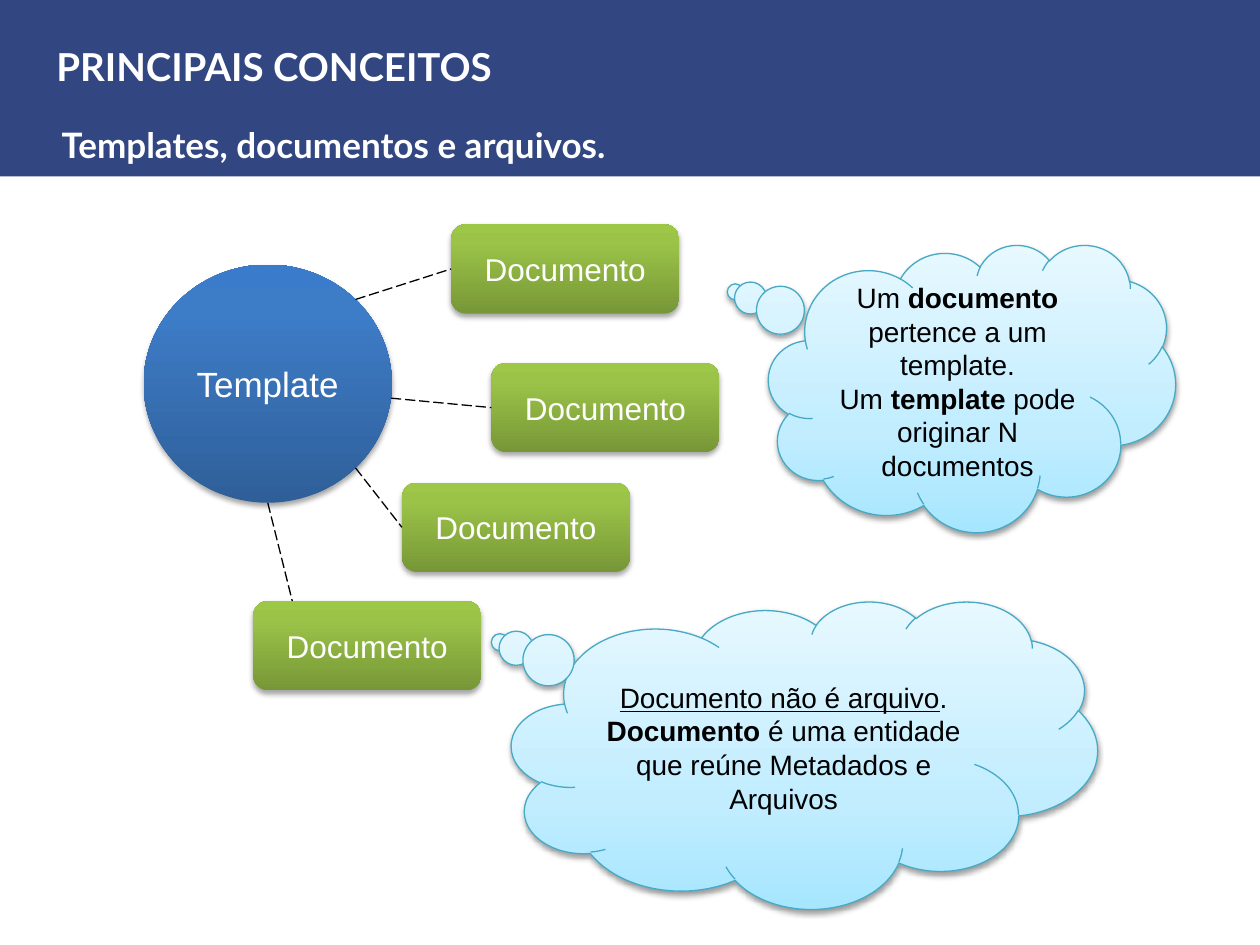
import math
from dataclasses import dataclass

import pptx
import pptx.dml.color
import pptx.enum.dml
import pptx.enum.shapes
import pptx.enum.text
import pptx.oxml
import pptx.oxml.ns
import pptx.util

Shape = pptx.enum.shapes.MSO_SHAPE
Align = pptx.enum.text.PP_ALIGN
Anchor = pptx.enum.text.MSO_ANCHOR
RGB = pptx.dml.color.RGBColor.from_string
Pt = pptx.util.Pt
NS = pptx.oxml.ns.nsdecls("a")


@dataclass(frozen=True)
class Theme:
    band: str = "324682"
    light: str = "FFFFFF"
    dark: str = "000000"
    edge: str = "46AAC5"
    blue: tuple = ((0, "2F5F99"), (80, "3D7CC7"), (100, "3A7CCB"))
    green: tuple = ((0, "779737"), (80, "9BC348"), (100, "9DC746"))
    sky: tuple = ((0, "A7E6FF"), (35, "C1EDFF"), (100, "E7F8FF"))
    head: str = "Lato"
    body: str = "Arial"
    title: int = 22
    large: int = 20
    label: int = 18
    note: int = 16
    thin: float = 0.75


@dataclass(frozen=True)
class Box:
    """Shares of the slide's width and height, in percent."""
    x: float
    y: float
    w: float
    h: float


@dataclass(frozen=True)
class Part:
    text: str
    bold: bool = False
    under: bool = False


@dataclass(frozen=True)
class Cloud:
    box: Box
    tail: tuple
    paras: tuple


@dataclass(frozen=True)
class Doc:
    x: float
    y: float
    angle: float


THEME = Theme()
HUB = Box(11.4, 28, 19.7, 25.2)
DOC_W, DOC_H = 18.1, 9.47
DOCS = (
    Doc(35.8, 23.73, -45),
    Doc(39, 38.4, 7),
    Doc(31.9, 51.07, 45),
    Doc(20.1, 63.6, 90),
)
CLOUDS = (
    Cloud(Box(61, 25.87, 32.3, 30.4), (-0.582, -0.335), (
        (Part("Um "), Part("documento", bold=True),
         Part(" pertence a um template.")),
        (Part("Um "), Part("template", bold=True),
         Part(" pode originar N documentos")),
    )),
    Cloud(Box(40.6, 63.6, 46.5, 32.53), (-0.52, -0.366), (
        (Part("Documento não é arquivo", under=True), Part(".")),
        (Part("Documento ", bold=True),
         Part("é uma entidade que reúne Metadados e Arquivos")),
    )),
)

deck = pptx.Presentation()
deck.slide_width = pptx.util.Inches(10)
deck.slide_height = pptx.util.Inches(7.5)
slide = deck.slides.add_slide(deck.slide_layouts[6])


def across(share: float) -> int:
    return round(deck.slide_width * share / 100)


def down(share: float) -> int:
    return round(deck.slide_height * share / 100)


def frame(box: Box) -> tuple:
    return across(box.x), down(box.y), across(box.w), down(box.h)


def write(para, parts: tuple, face: str, size: int, color: str) -> None:
    for part in parts:
        run = para.add_run()
        run.text = part.text
        font = run.font
        font.name, font.size = face, Pt(size)
        font.bold, font.underline = part.bold, part.under
        font.color.rgb = RGB(color)


def blend(shape, stops: tuple) -> None:
    shape.fill.gradient()
    shape.fill.gradient_angle = 90
    listing = shape._element.spPr.find(".//" + pptx.oxml.ns.qn("a:gsLst"))
    for stop in list(listing):
        listing.remove(stop)
    for place, color in stops:
        listing.append(pptx.oxml.parse_xml(
            f'<a:gs {NS} pos="{place * 1000}"><a:srgbClr val="{color}"/></a:gs>'))


def shade(shape, alpha: int, dist: float) -> None:
    shape.shadow.inherit = False
    effects = shape._element.spPr.find(pptx.oxml.ns.qn("a:effectLst"))
    effects.append(pptx.oxml.parse_xml(
        f'<a:outerShdw {NS} blurRad="{Pt(3.1)}" dist="{Pt(dist)}" dir="5400000" '
        f'rotWithShape="0"><a:srgbClr val="{THEME.dark}">'
        f'<a:alpha val="{alpha * 1000}"/></a:srgbClr></a:outerShdw>'))


def solid(kind, box: Box, stops: tuple, paras: tuple, size: int, color: str,
          alpha: int = 35, dist: float = 1.8):
    shape = slide.shapes.add_shape(kind, *frame(box))
    blend(shape, stops)
    shape.line.fill.background()
    shade(shape, alpha, dist)
    text = shape.text_frame
    text.word_wrap = True
    text.vertical_anchor = Anchor.MIDDLE
    for i, parts in enumerate(paras):
        para = text.add_paragraph() if i else text.paragraphs[0]
        para.alignment = Align.CENTER
        write(para, parts, THEME.body, size, color)
    return shape


def heading(box: Box, words: str, size: int):
    text = slide.shapes.add_textbox(*frame(box)).text_frame
    text.word_wrap = True
    write(text.paragraphs[0], (Part(words, bold=True),),
          THEME.head, size, THEME.light)
    return text.paragraphs[0]


def link(doc: Doc, shape) -> None:
    turn = math.radians(doc.angle)
    x = across(HUB.x + HUB.w / 2 * (1 + math.cos(turn)))
    y = down(HUB.y + HUB.h / 2 * (1 + math.sin(turn)))
    line = slide.shapes.add_connector(
        pptx.enum.shapes.MSO_CONNECTOR.STRAIGHT, x, y, across(23.2), shape.top)
    if doc.angle < 90:
        line.end_connect(shape, 1)
    line.line.color.rgb = RGB(THEME.dark)
    line.line.width = Pt(THEME.thin)
    line.line.dash_style = pptx.enum.dml.MSO_LINE.LONG_DASH
    line._element.spPr.append(pptx.oxml.parse_xml(f"<a:effectLst {NS}/>"))


def puff(cloud: Cloud) -> None:
    shape = solid(Shape.CLOUD_CALLOUT, cloud.box, THEME.sky, cloud.paras,
                  THEME.note, THEME.dark, 38, 1.6)
    for i, value in enumerate(cloud.tail):
        shape.adjustments[i] = value
    shape.line.color.rgb = RGB(THEME.edge)
    shape.line.width = Pt(THEME.thin)


def main() -> None:
    band = slide.shapes.add_shape(Shape.RECTANGLE, *frame(Box(0, 0, 100, 18.67)))
    band.shadow.inherit = False
    band.fill.solid()
    band.fill.fore_color.rgb = RGB(THEME.band)
    band.line.fill.background()
    heading(Box(3.5, 3.87, 82, 6.27), "PRINCIPAIS CONCEITOS", THEME.title)
    lead = heading(Box(3.9, 10.4, 66.4, 7.07),
                   "Templates, documentos e arquivos.", THEME.large)
    lead.line_spacing = Pt(35)
    solid(Shape.OVAL, HUB, THEME.blue, ((Part("Template"),),),
          THEME.large, THEME.light)
    cards = [solid(Shape.ROUNDED_RECTANGLE, Box(doc.x, doc.y, DOC_W, DOC_H),
                   THEME.green, ((Part("Documento"),),), THEME.label, THEME.light)
             for doc in DOCS]
    for doc, card in zip(DOCS, cards):
        link(doc, card)
    for cloud in CLOUDS:
        puff(cloud)
    deck.save("out.pptx")


if __name__ == "__main__":
    main()
